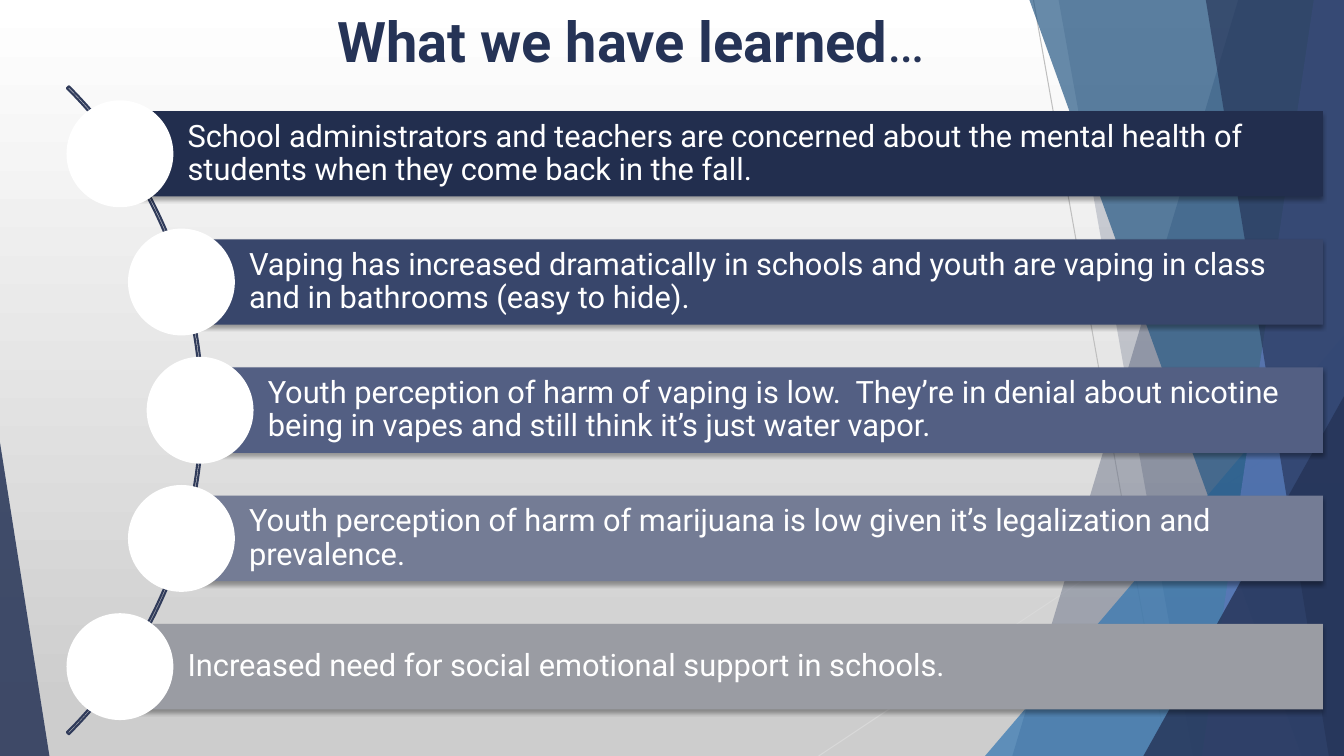
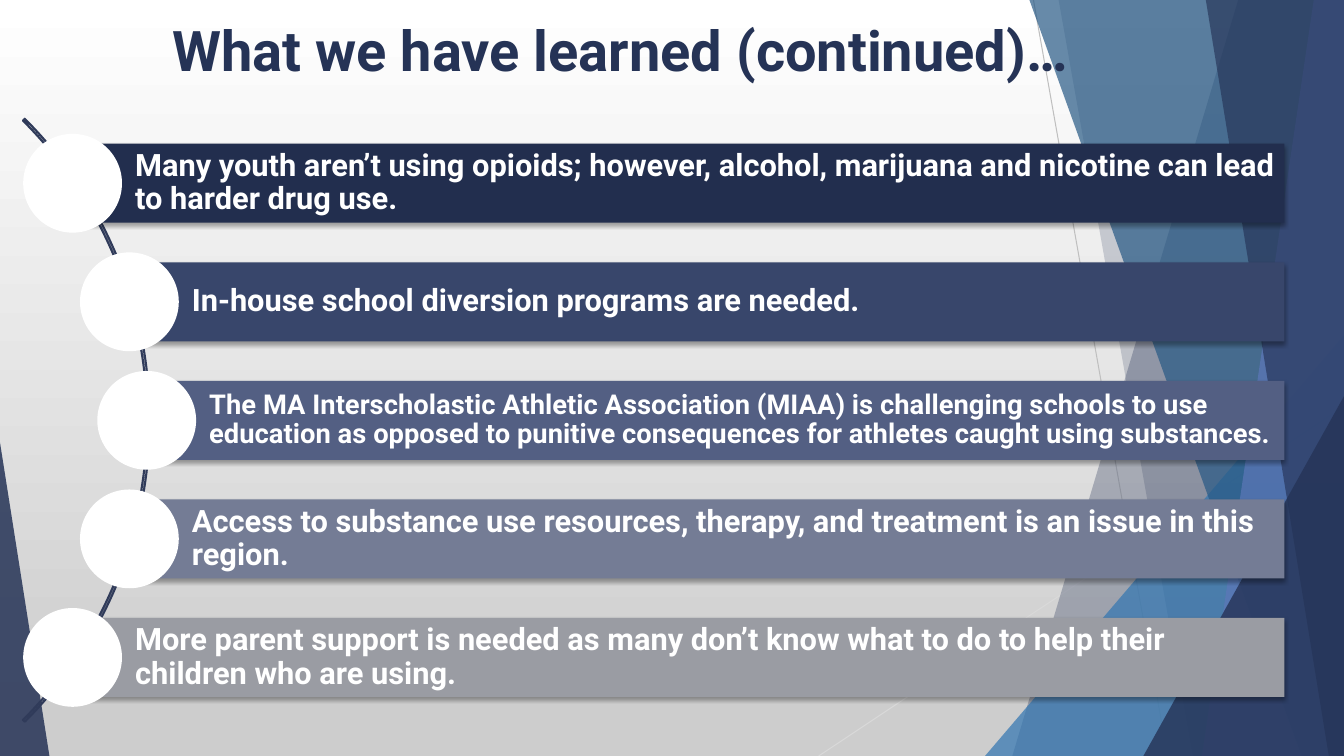
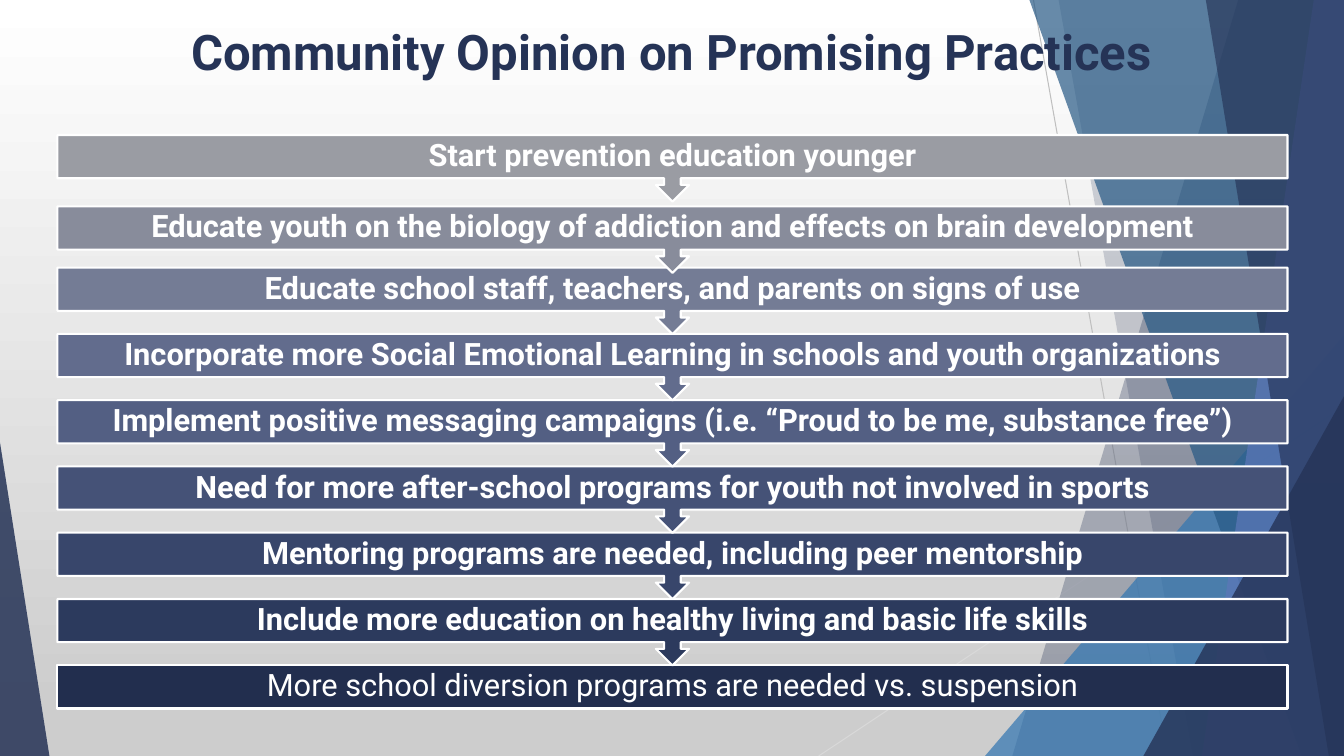
import pptx
import pptx.util
import pptx.dml.color
import pptx.enum.shapes
import pptx.enum.text
import pptx.oxml
import pptx.oxml.ns
import lxml.etree

Inches, Pt = pptx.util.Inches, pptx.util.Pt
Color = pptx.dml.color.RGBColor
Kind = pptx.enum.shapes.MSO_SHAPE
Align = pptx.enum.text.PP_ALIGN
Anchor = pptx.enum.text.MSO_ANCHOR
qn = pptx.oxml.ns.qn

WIDTH, HEIGHT = 13.33, 7.5
FONT = "Roboto"
WHITE = Color(0xFF, 0xFF, 0xFF)
SILVER = Color(0xCD, 0xCD, 0xCD)
NAVY = Color(0x25, 0x33, 0x56)
BLUE = Color(0x34, 0x77, 0xB2)
TEAL = Color(0x27, 0x59, 0x85)
PERIWINKLE = Color(0x5D, 0x77, 0xB9)
ARC_LINE = Color(0x30, 0x3B, 0x5A)
SHADES = [
    Color(0x22, 0x2E, 0x4E), Color(0x2C, 0x3A, 0x5D), Color(0x38, 0x46, 0x6B),
    Color(0x45, 0x52, 0x77), Color(0x53, 0x5F, 0x83), Color(0x62, 0x6C, 0x8D),
    Color(0x74, 0x7C, 0x95), Color(0x88, 0x8C, 0x9B), Color(0x9A, 0x9C, 0xA3),
]
SHADOW = (
    f'<a:effectLst {pptx.oxml.ns.nsdecls("a")}>'
    '<a:outerShdw blurRad="38100" dist="25400" dir="5400000" rotWithShape="0">'
    '<a:srgbClr val="000000"><a:alpha val="35000"/></a:srgbClr>'
    '</a:outerShdw></a:effectLst>'
)


def paint(shape, fill=None, line=None, opacity=100):
    """Set fill and outline (None for neither) and drop the theme's shadow."""
    shape.shadow.inherit = False
    if fill is None:
        shape.fill.background()
    else:
        shape.fill.solid()
        shape.fill.fore_color.rgb = fill
        if opacity < 100:
            tint = shape.element.spPr.find(qn("a:solidFill"))[0]
            lxml.etree.SubElement(tint, qn("a:alpha"), val=str(opacity * 1000))
    if line is None:
        shape.line.fill.background()
    else:
        shape.line.color.rgb = line
        shape.line.width = Pt(1.5)


def write(frame, text, color, size, bold, frame_format, para_format):
    """Put one formatted paragraph into a text frame."""
    frame.text = text
    para = frame.paragraphs[0]
    font_format = {"name": FONT, "size": Pt(size), "bold": bold}
    for target, values in ((frame, frame_format), (para, para_format),
                           (para.runs[0].font, font_format)):
        for name, value in values.items():
            setattr(target, name, value)
    para.runs[0].font.color.rgb = color


deck = pptx.Presentation()
deck.slide_width, deck.slide_height = Inches(WIDTH), Inches(HEIGHT)
layout = deck.slide_layouts.get_by_name("Title Only")
for holder in list(layout.placeholders):
    if holder.placeholder_format.idx != 0:
        holder.element.getparent().remove(holder.element)

# Background shared through the master
backdrop = deck.slide_master.background.fill
backdrop.gradient()
backdrop.gradient_angle = 270
for stop, position, color in zip(backdrop.gradient_stops, (0, 0.94), (WHITE, SILVER)):
    stop.position = position
    stop.color.rgb = color

# Titles: text, size, alignment, box
TITLES = [
    ("What we have learned…", 40, Align.CENTER, (1.55, 0.01, 9.42, 1.41)),
    ("What we have learned (continued)…", 40, Align.LEFT, (1.61, 0.1, 10.24, 1.44)),
    ("Community Opinion on Promising Practices", 35, Align.CENTER, (0.75, 0.16, 11.83, 1.24)),
]
pages = []
for text, size, alignment, place in TITLES:
    page = deck.slides.add_slide(layout)
    title = page.shapes.title
    title.left, title.top, title.width, title.height = map(Inches, place)
    write(title.text_frame, text, NAVY, size, True,
          {"vertical_anchor": Anchor.TOP, "word_wrap": True,
           "auto_size": pptx.enum.text.MSO_AUTO_SIZE.NONE},
          {"alignment": alignment})
    pages.append(page)

ellipsis = pages[0].shapes.title.text_frame.paragraphs[0]
ellipsis.runs[0].text = ellipsis.text[:-1]
span = ellipsis.add_run()
span.text = "…"
for name, value in {"name": FONT, "size": Pt(40), "bold": False}.items():
    setattr(span.font, name, value)
span.font.color.rgb = NAVY

# Facets: drawn on the first page, then moved to the layout for all pages
first = pages[0].shapes
facets = []
for start, end, grey in (((10.25, 0), (11.58, HEIGHT), 0xBF),
                         ((WIDTH, 4.03), (8.12, HEIGHT), 0xD9)):
    thread = first.add_connector(pptx.enum.shapes.MSO_CONNECTOR.STRAIGHT,
                                 *map(Inches, start + end))
    thread.line.color.rgb = Color(grey, grey, grey)
    thread.line.width = Pt(0.75)
    lxml.etree.SubElement(thread.element.spPr, qn("a:effectLst"))
    facets.append(thread)

# Panels run from a slanted edge (top x, bottom x) to the right side;
# wedges are right triangles (left, top, width, apex side)
for outline, color, opacity in (
    ((12.28, 10.04), NAVY, 30),
    ((10.5, 11.83), NAVY, 20),
    ((9.77, 3.33, 3.56, 1), BLUE, 72),
    ((10.21, 12.91), TEAL, 70),
    ((13.03, 11.92), PERIWINKLE, 70),
    ((11.96, 13.18), NAVY, 65),
    ((11.34, 3.93, 1.99, 1), NAVY, 80),
    ((0, 4.39, 0.49, 0), NAVY, 85),
):
    if len(outline) == 2:
        upper, lower = outline
        builder = first.build_freeform(Inches(upper), 0, scale=1.0)
        builder.add_line_segments(
            [(Inches(x), Inches(y)) for x, y in ((WIDTH, 0), (WIDTH, HEIGHT), (lower, HEIGHT))])
        facet = builder.convert_to_shape()
    else:
        left, top, width, apex = outline
        facet = first.add_shape(Kind.ISOSCELES_TRIANGLE,
                                *map(Inches, (left, top, width, HEIGHT - top)))
        facet.adjustments[0] = apex
    paint(facet, color, opacity=opacity)
    facets.append(facet)
for facet in facets:
    layout.shapes.element.append(facet.element)

# Curved lists: every length is a share of the disc's diameter
INDENTS = (0, 0.575, 0.75, 0.575, 0)
LESSONS = [
    {"page": pages[0], "disc": 1.06, "left": 1.19, "right": 13.12, "middle": 4.07,
     "arc": 9.09, "bold": False, "rows": [
         ("School administrators and teachers are concerned about the mental health of "
          "students when they come back in the fall.", 22),
         ("Vaping has increased dramatically in schools and youth are vaping in class "
          "and in bathrooms (easy to hide).", 22),
         ("Youth perception of harm of vaping is low.  They’re in denial about nicotine "
          "being in vapes and still think it’s just water vapor.", 22),
         ("Youth perception of harm of marijuana is low given it’s legalization and "
          "prevalence.", 22),
         ("Increased need for social emotional support in schools.", 22)]},
    {"page": pages[1], "disc": 0.98, "left": 0.72, "right": 12.74, "middle": 4.17,
     "arc": 8.46, "bold": True, "rows": [
         ("Many youth aren’t using opioids; however, alcohol, marijuana and nicotine can "
          "lead to harder drug use.", 22),
         ("In-house school diversion programs are needed.", 22),
         ("The MA Interscholastic Athletic Association (MIAA) is challenging schools to use "
          "education as opposed to punitive consequences for athletes caught using "
          "substances.", 19.5),
         ("Access to substance use resources, therapy, and treatment is an issue in this "
          "region.", 22),
         ("More parent support is needed as many don’t know what to do to help their "
          "children who are using.", 22)]},
]
for lesson in LESSONS:
    shapes, disc, size_of_arc = lesson["page"].shapes, lesson["disc"], lesson["arc"]
    arc_right = lesson["left"] + max(INDENTS) * disc + 0.03
    arc = shapes.add_shape(Kind.BLOCK_ARC, *map(Inches, (
        arc_right - size_of_arc, lesson["middle"] - size_of_arc / 2, size_of_arc, size_of_arc)))
    for index, value in enumerate((189, 27, 0.003)):
        arc.adjustments[index] = value
    paint(arc, line=ARC_LINE)

    for row, (text, size) in enumerate(lesson["rows"]):
        left = lesson["left"] + INDENTS[row] * disc
        center = lesson["middle"] + (row - 2) * 1.2 * disc
        bar = shapes.add_shape(Kind.RECTANGLE, *map(Inches, (
            left, center - 0.4 * disc, lesson["right"] - left, 0.8 * disc)))
        paint(bar, SHADES[::2][row])
        bar.element.spPr.replace(bar.element.spPr.find(qn("a:effectLst")),
                                 pptx.oxml.parse_xml(SHADOW))
        write(bar.text_frame, text, WHITE, size, lesson["bold"],
              {"word_wrap": True, "vertical_anchor": Anchor.MIDDLE,
               "margin_left": Inches(0.633 * disc), "margin_right": Inches(0.06),
               "margin_top": Inches(0.06), "margin_bottom": Inches(0.06)},
              {"alignment": Align.LEFT, "line_spacing": 0.9})
        dot = shapes.add_shape(Kind.OVAL, *map(Inches, (
            left - disc / 2, center - disc / 2, disc, disc)))
        paint(dot, WHITE)

# Chain of practices, drawn from the bottom row up so each arrow overlaps the next row
PRACTICES = [
    "Start prevention education younger",
    "Educate youth on the biology of addiction and effects on brain development",
    "Educate school staff, teachers, and parents on signs of use",
    "Incorporate more Social Emotional Learning in schools and youth organizations",
    "Implement positive messaging campaigns (i.e. “Proud to be me, substance free”)",
    "Need for more after-school programs for youth not involved in sports",
    "Mentoring programs are needed, including peer mentorship",
    "Include more education on healthy living and basic life skills",
    "More school diversion programs are needed vs. suspension",
]
LAST = len(PRACTICES) - 1
NUDGES = {1: 0.05}
for row in range(LAST, -1, -1):
    top = 1.34 + row * (6.6 - 1.34) / LAST + NUDGES.get(row, 0)
    kind, height = (Kind.RECTANGLE, 0.43) if row == LAST else (Kind.DOWN_ARROW_CALLOUT, 0.66)
    step = pages[2].shapes.add_shape(kind, *map(Inches, (0.57, top, 12.2, height)))
    paint(step, SHADES[LAST - row], WHITE)
    write(step.text_frame, PRACTICES[row], WHITE, 22, row != LAST,
          {"word_wrap": True, "vertical_anchor": Anchor.MIDDLE,
           "margin_left": Inches(0.17), "margin_right": Inches(0.17),
           "margin_top": 0, "margin_bottom": 0},
          {"alignment": Align.CENTER, "line_spacing": 0.9})

deck.save("out.pptx")
